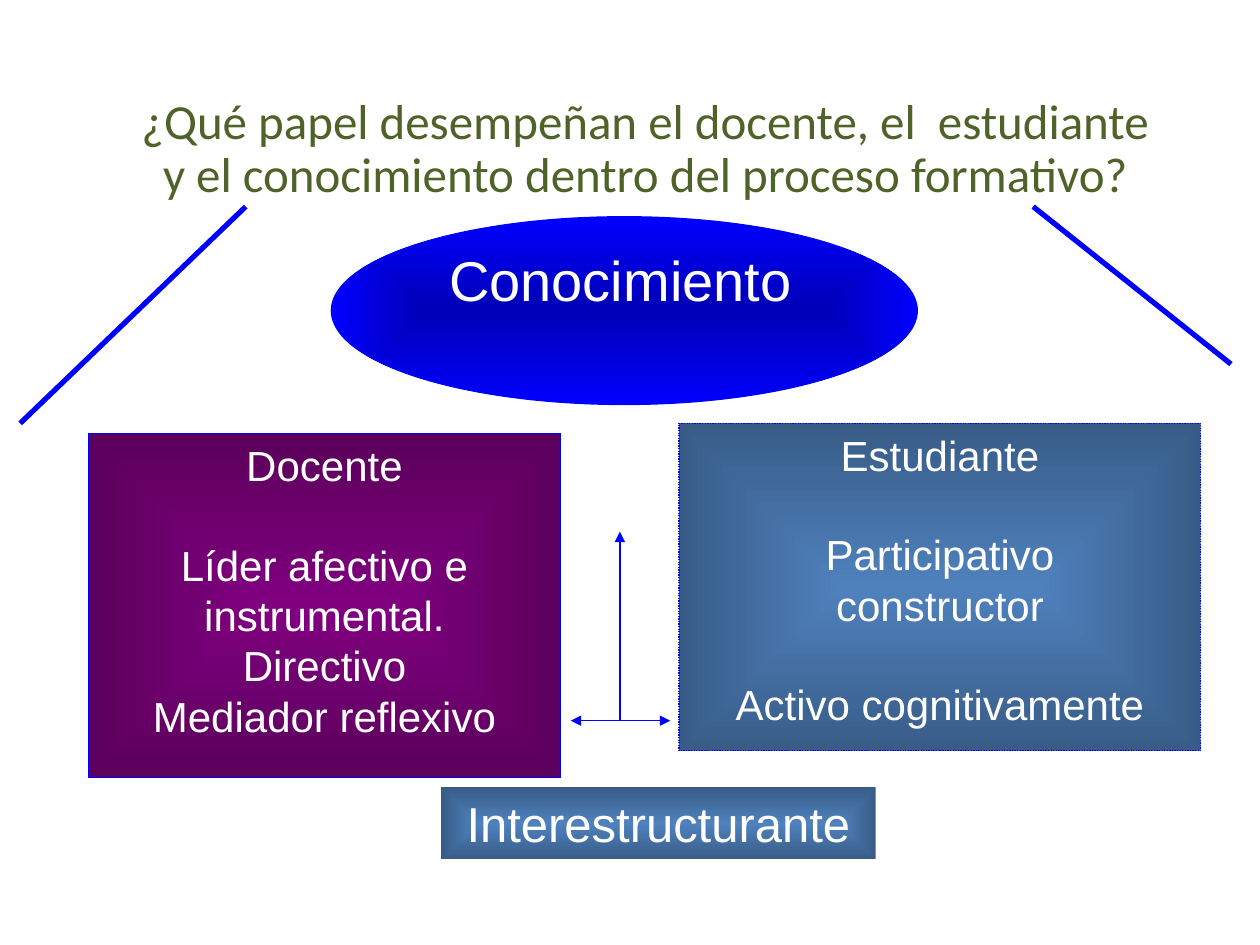
from lxml.etree import SubElement
from pptx import Presentation
from pptx.dml.color import RGBColor
from pptx.enum.dml import MSO_LINE
from pptx.enum.shapes import MSO_CONNECTOR, MSO_SHAPE
from pptx.enum.text import MSO_ANCHOR, PP_ALIGN
from pptx.oxml.ns import qn
from pptx.util import Inches, Pt

BLUE, STEEL, PURPLE = "0000FF", "4F81BD", "800080"
WHITE, GREEN = "FFFFFF", "4F6228"


def color(code):
    return RGBColor.from_string(code)


def inches(*values):
    return [Inches(v) for v in values]


class Board:
    def __init__(self, deck):
        self.slide = deck.slides.add_slide(deck.slide_layouts[5])

    def label(self, shape, lines, size, font="Arial", code=WHITE,
              anchor=MSO_ANCHOR.TOP, gaps=()):
        """Fill a shape with centred lines; gaps lists the lines set apart."""
        frame = shape.text_frame
        frame.text = "\n".join(lines)
        frame.word_wrap = True
        frame.vertical_anchor = anchor
        for i, para in enumerate(frame.paragraphs):
            para.alignment = PP_ALIGN.CENTER
            if i in gaps:
                para.space_before = Pt(28)
            for run in para.runs:
                run.font.name, run.font.size = font, Pt(size)
                run.font.color.rgb = color(code)

    def title(self, text, box):
        shape = self.slide.shapes.title
        shape.left, shape.top, shape.width, shape.height = inches(*box)
        self.label(shape, [text], 28, "Calibri", GREEN, MSO_ANCHOR.MIDDLE)
        shape.text_frame.paragraphs[0].line_spacing = 0.9

    def glow(self, shape, code, dark):
        """Gradient from the centre out, with stop number dark shaded."""
        shape.fill.gradient()
        for stop in shape.fill.gradient_stops:
            stop.color.rgb = color(code)
        grad = shape._element.spPr.find(qn("a:gradFill"))
        tones = list(grad.iter(qn("a:srgbClr")))
        SubElement(tones[dark], qn("a:shade"), val="46275")
        grad.remove(grad.find(qn("a:lin")))
        route = SubElement(grad, qn("a:path"), {"path": "shape"})
        SubElement(route, qn("a:fillToRect"),
                   {side: "50000" for side in "ltrb"})

    def block(self, box, code, kind=MSO_SHAPE.RECTANGLE, dark=1,
              edge=BLUE, dash=None, home=None):
        shapes = (home or self.slide).shapes
        shape = shapes.add_shape(kind, *inches(*box))
        shape.shadow.inherit = False
        self.glow(shape, code, dark)
        if edge:
            shape.line.color.rgb = color(edge)
            shape.line.width = Pt(0.75)
            if dash:
                shape.line.dash_style = dash
        else:
            shape.line.fill.background()
        return shape

    def oval(self, text, box, area):
        group = self.slide.shapes.add_group_shape()
        self.block(box, BLUE, MSO_SHAPE.OVAL, dark=0, home=group)
        self.label(group.shapes.add_textbox(*inches(*area)), [text], 32)

    def line(self, start, end, width=0.75, heads=()):
        link = self.slide.shapes.add_connector(
            MSO_CONNECTOR.STRAIGHT, *inches(*start, *end))
        link.line.color.rgb = color(BLUE)
        link.line.width = Pt(width)
        props = link._element.spPr
        for head in heads:
            SubElement(props.find(qn("a:ln")), qn(head), type="triangle")
        SubElement(props, qn("a:effectLst"))


def main():
    deck = Presentation()
    deck.slide_width, deck.slide_height = inches(10, 7.5)
    board = Board(deck)

    board.title("¿Qué papel desempeñan el docente, el  estudiante y el "
                "conocimiento dentro del proceso formativo?",
                (0.9, 0.44, 8.44, 1.5))

    model = board.block((3.5, 6.25, 3.45, 0.57), STEEL, edge=None)
    board.label(model, ["Interestructurante"], 28)

    board.line((1.95, 1.64), (0.16, 3.36), 3)
    board.line((8.2, 1.64), (9.77, 2.89), 3)
    board.oval("Conocimiento", (2.63, 1.72, 4.65, 1.49),
               (2.19, 1.9, 5.47, 1.12))

    student = board.block((5.39, 3.36, 4.14, 2.6), STEEL,
                          dash=MSO_LINE.ROUND_DOT)
    board.label(student, ["Estudiante", "Participativo", "constructor",
                          "Activo cognitivamente"], 24, gaps=(1, 3))

    teacher = board.block((0.7, 3.44, 3.75, 2.73), PURPLE)
    board.label(teacher, ["Docente", "Líder afectivo e instrumental.",
                          "Directivo", "Mediador reflexivo"], 24, gaps=(1,))

    board.line((4.53, 5.72), (5.32, 5.72), heads=("a:headEnd", "a:tailEnd"))
    board.line((4.92, 5.72), (4.92, 4.22), heads=("a:tailEnd",))

    deck.save("out.pptx")


if __name__ == "__main__":
    main()
